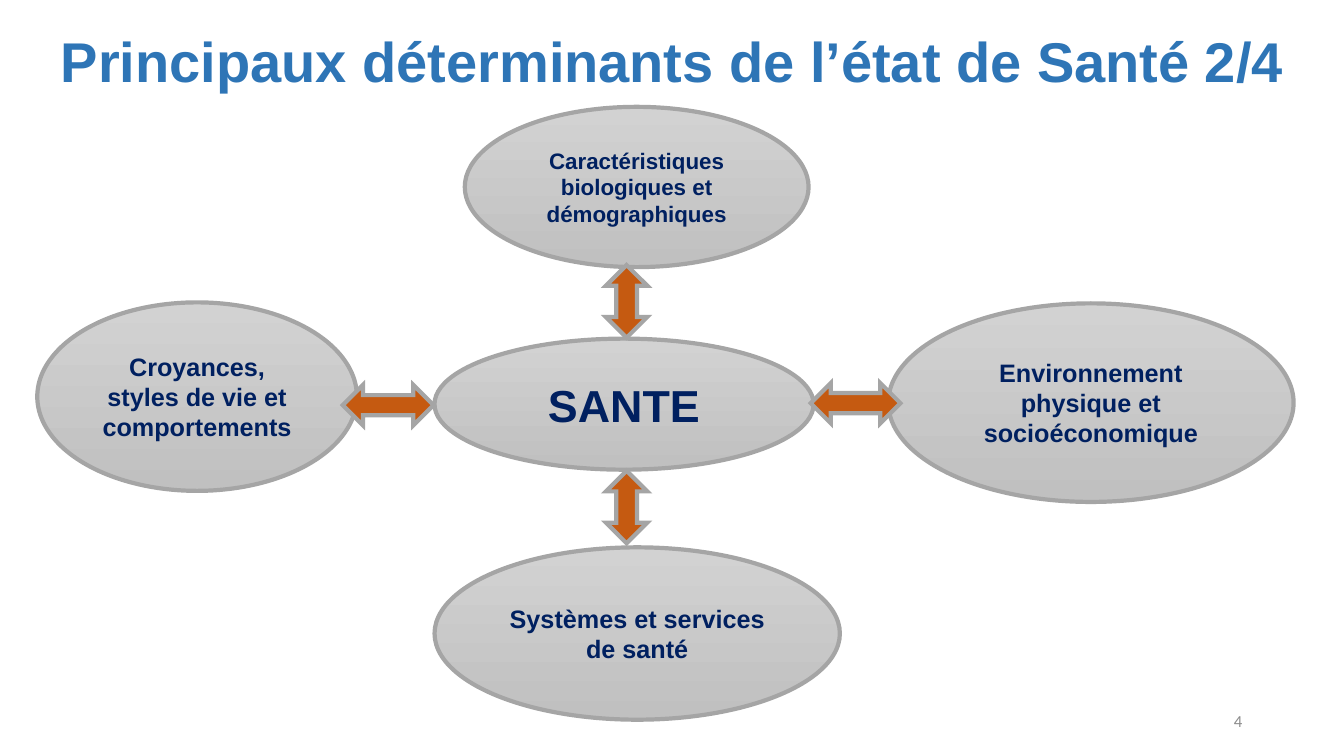
from lxml.etree import SubElement
from pptx import Presentation
from pptx.dml.color import RGBColor as RGB
from pptx.enum.shapes import MSO_SHAPE as Kind
from pptx.enum.text import MSO_ANCHOR as Anchor, MSO_AUTO_SIZE as Fit, PP_ALIGN as Align
from pptx.oxml.ns import qn
from pptx.util import Pt

PX = 9144  # one hundredth of an inch
HUES = {
    "title": "2E75B6", "text": "002060", "page": "8C8C8C", "edge": "A5A5A5",
    "arrow": "C55A11", "top": "D2D2D2", "base": "C0C0C0",
}


def hue(name):
    return RGB.from_string(HUES[name])


def write(shape, text, size, color, align=Align.CENTER, font="Arial", bold=True):
    frame = shape.text_frame
    for key, val in {"word_wrap": True, "auto_size": Fit.NONE,
                     "vertical_anchor": Anchor.MIDDLE}.items():
        setattr(frame, key, val)
    par = frame.paragraphs[0]
    par.alignment = align
    run = par.add_run()
    run.text = text
    for key, val in {"size": Pt(size), "name": font, "bold": bold}.items():
        setattr(run.font, key, val)
    run.font.color.rgb = hue(color)
    return par


deck = Presentation()
deck.slide_width, deck.slide_height = 1333 * PX, 750 * PX
slide = deck.slides.add_slide(deck.slide_layouts[5])
shapes = slide.shapes

# Title
title = shapes.title
for key, val in {"left": 0, "top": 21, "width": 1333, "height": 85}.items():
    setattr(title, key, val * PX)
head = write(title, "Principaux déterminants de l’état de Santé 2/4", 40, "title")
head.line_spacing = 0.9

# Health and its four factors
OVALS = [
    ("Caractéristiques biologiques et démographiques", 16, (461, 106, 341, 159)),
    ("Environnement physique et socioéconomique", 18, (881, 301, 402, 197)),
    ("Croyances, styles de vie et comportements", 18, (37, 300, 317, 187)),
    ("SANTE", 32, (431, 336, 376, 130)),
    ("Systèmes et services de santé", 18, (431, 543, 402, 171)),
]
drawn = []
for text, size, box in OVALS:
    oval = shapes.add_shape(Kind.OVAL, *[n * PX for n in box])
    oval.fill.gradient()
    oval.fill.gradient_angle = 270
    for stop, name in zip(oval.fill.gradient_stops, ("top", "base")):
        stop.color.rgb = hue(name)
    write(oval, text, size, "text")
    drawn.append(oval)

# Double arrows around the centre
ARROWS = [
    (Kind.UP_DOWN_ARROW, (601, 263, 41, 72)),
    (Kind.LEFT_RIGHT_ARROW, (804, 380, 89, 40)),
    (Kind.LEFT_RIGHT_ARROW, (340, 382, 90, 40)),
    (Kind.UP_DOWN_ARROW, (601, 467, 41, 72)),
]
for kind, box in ARROWS:
    arrow = shapes.add_shape(kind, *[n * PX for n in box])
    arrow.fill.solid()
    arrow.fill.fore_color.rgb = hue("arrow")
    drawn.append(arrow)

for shape in drawn:
    shape.shadow.inherit = False
    shape.line.color.rgb = hue("edge")
    shape.line.width = Pt(3)
    edge = shape._element.spPr.find(qn("a:ln"))
    SubElement(edge, qn("a:miter"), lim="800000")

# Page number
page = shapes.add_textbox(*[n * PX for n in (942, 695, 300, 40)])
write(page, "4", 12, "page", Align.RIGHT, "Calibri", False)

deck.save("out.pptx")
